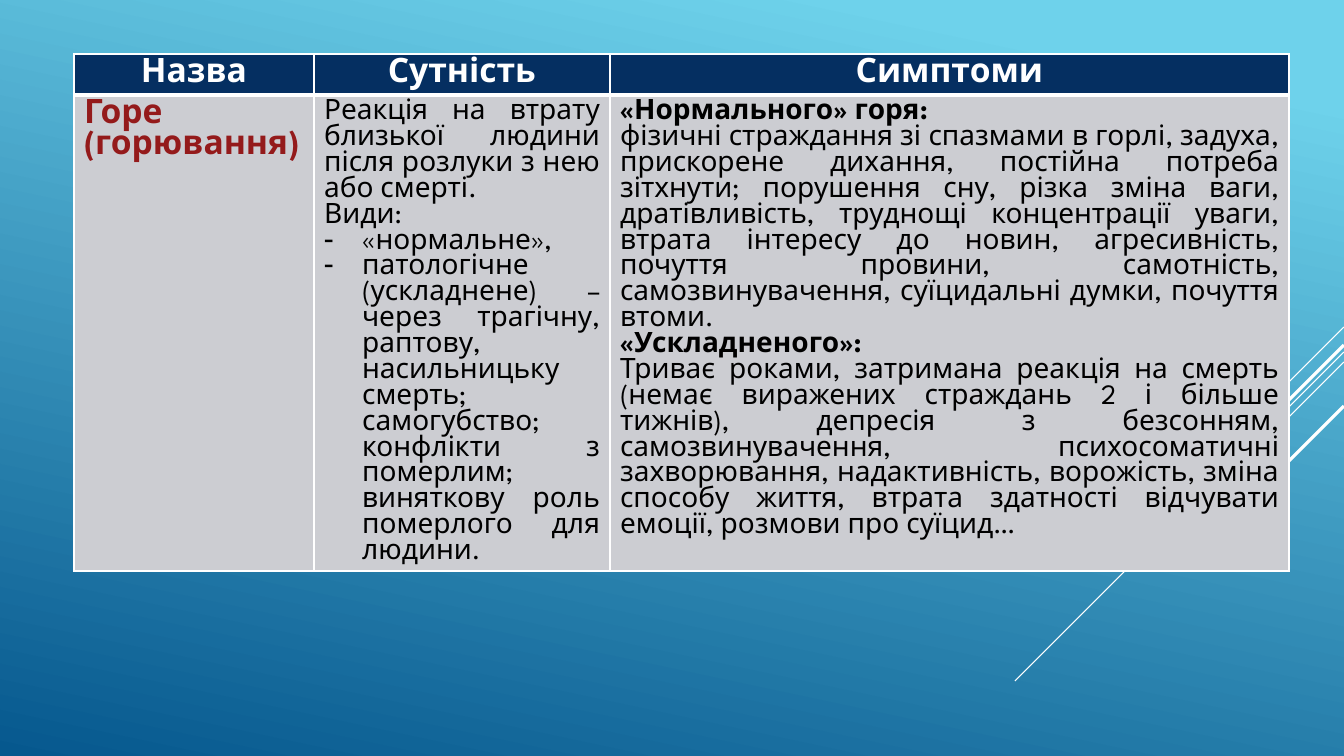
from dataclasses import dataclass

from lxml import etree
from pptx import Presentation
from pptx.dml.color import RGBColor
from pptx.enum.shapes import MSO_CONNECTOR
from pptx.enum.text import PP_ALIGN
from pptx.oxml.ns import qn
from pptx.util import Emu, Pt

EMU_PER_PX = 12192000 / 1344
WIDTH, HEIGHT = 1344, 756
FONT = "League Spartan"
COLORS = {
    "sky": "6ED2EB",
    "sea": "06588E",
    "white": "FFFFFF",
    "header": "052F61",
    "body": "CCCDD2",
    "term": "941A1B",
    "text": "000000",
}


@dataclass
class Ray:
    """A 45-degree line running down and left from the right edge."""
    top: int
    drop: int
    weight: float


@dataclass
class Para:
    text: str
    size: int = 20
    bold: bool = False
    color: str = "text"
    align: PP_ALIGN = PP_ALIGN.JUSTIFY
    bullet: bool = False


RAYS = [
    Ray(327, 101, 0.75),
    Ray(352, 329, 0.75),
    Ray(362, 209, 0.75),
    Ray(345, 193, 2.25),
    Ray(406, 140, 2.25),
]
COLUMNS = [240, 296, 679]
ROWS = [41, 476]
BULLET_INDENT = 38
HEADERS = ["Назва", "Сутність", "Симптоми"]
GRIEF = [
    [Para("Горе (горювання)", 24, True, "term")],
    [
        Para("Реакція на втрату близької людини після розлуки з нею або смерті."),
        Para("Види:"),
        Para("«нормальне»,", bullet=True),
        Para("патологічне (ускладнене) – через трагічну, раптову, насильницьку "
             "смерть; самогубство; конфлікти з померлим; виняткову роль "
             "померлого для людини.", bullet=True),
    ],
    [
        Para("«Нормального» горя:", bold=True),
        Para("фізичні страждання зі спазмами в горлі, задуха, прискорене дихання, "
             "постійна потреба зітхнути; порушення сну, різка зміна ваги, "
             "дратівливість, труднощі концентрації уваги, втрата інтересу до новин, "
             "агресивність, почуття провини, самотність, самозвинувачення, "
             "суїцидальні думки, почуття втоми."),
        Para("«Ускладненого»:", bold=True),
        Para("Триває роками, затримана реакція на смерть (немає виражених страждань "
             "2 і більше тижнів), депресія з безсонням, самозвинувачення, "
             "психосоматичні захворювання, надактивність, ворожість, зміна способу "
             "життя, втрата здатності відчувати емоції, розмови про суїцид…"),
    ],
]


def px(n: int) -> Emu:
    return Emu(round(n * EMU_PER_PX))


def rgb(name: str) -> RGBColor:
    return RGBColor.from_string(COLORS[name])


def paint_background(s) -> None:
    fill = s.background.fill
    fill.gradient()
    fill.gradient_angle = 258
    for stop, (position, color) in zip(fill.gradient_stops, [(0.1, "sky"), (1, "sea")]):
        stop.position = position
        stop.color.rgb = rgb(color)


def draw_ray(s, ray: Ray) -> None:
    line = s.shapes.add_connector(
        MSO_CONNECTOR.STRAIGHT, px(WIDTH), px(ray.top),
        px(WIDTH - ray.drop), px(ray.top + ray.drop))
    line.line.color.rgb = rgb("white")
    line.line.width = Pt(ray.weight)
    etree.SubElement(line._element.spPr, qn("a:effectLst"))


def set_borders(cell, bottom: float) -> None:
    tc_pr = cell._tc.get_or_add_tcPr()
    for side, weight in {"L": 1, "R": 1, "T": 1, "B": bottom}.items():
        ln = etree.SubElement(tc_pr, qn(f"a:ln{side}"), w=str(Pt(weight)))
        solid = etree.SubElement(ln, qn("a:solidFill"))
        etree.SubElement(solid, qn("a:srgbClr"), val=COLORS["white"])


def write_para(p, para: Para) -> None:
    p.text = para.text
    p.alignment = para.align
    if para.bullet:
        p_pr = p._p.get_or_add_pPr()
        p_pr.set("marL", str(px(BULLET_INDENT)))
        p_pr.set("indent", str(-px(BULLET_INDENT)))
        etree.SubElement(p_pr, qn("a:buChar"), char="-")
    font = p.runs[0].font
    font.name = FONT
    font.size = Pt(para.size)
    font.bold = para.bold
    font.color.rgb = rgb(para.color)


def fill_cell(cell, paras: list[Para], fill: str, bottom: float) -> None:
    set_borders(cell, bottom)
    cell.fill.solid()
    cell.fill.fore_color.rgb = rgb(fill)
    tf = cell.text_frame
    for i, para in enumerate(paras):
        write_para(tf.add_paragraph() if i else tf.paragraphs[0], para)


def draw_table(s) -> None:
    table = s.shapes.add_table(
        len(ROWS), len(COLUMNS), px(74), px(54), px(sum(COLUMNS)), px(sum(ROWS))).table
    for row, height in zip(table.rows, ROWS):
        row.height = px(height)
    for i, width in enumerate(COLUMNS):
        table.columns[i].width = px(width)
        header = Para(HEADERS[i], 24, True, "white", PP_ALIGN.CENTER)
        fill_cell(table.cell(0, i), [header], "header", 3)
        fill_cell(table.cell(1, i), GRIEF[i], "body", 1)


def main() -> None:
    prs = Presentation()
    prs.slide_width, prs.slide_height = px(WIDTH), px(HEIGHT)
    s = prs.slides.add_slide(prs.slide_layouts[6])
    paint_background(s)
    for ray in RAYS:
        draw_ray(s, ray)
    draw_table(s)
    prs.save("out.pptx")


if __name__ == "__main__":
    main()
